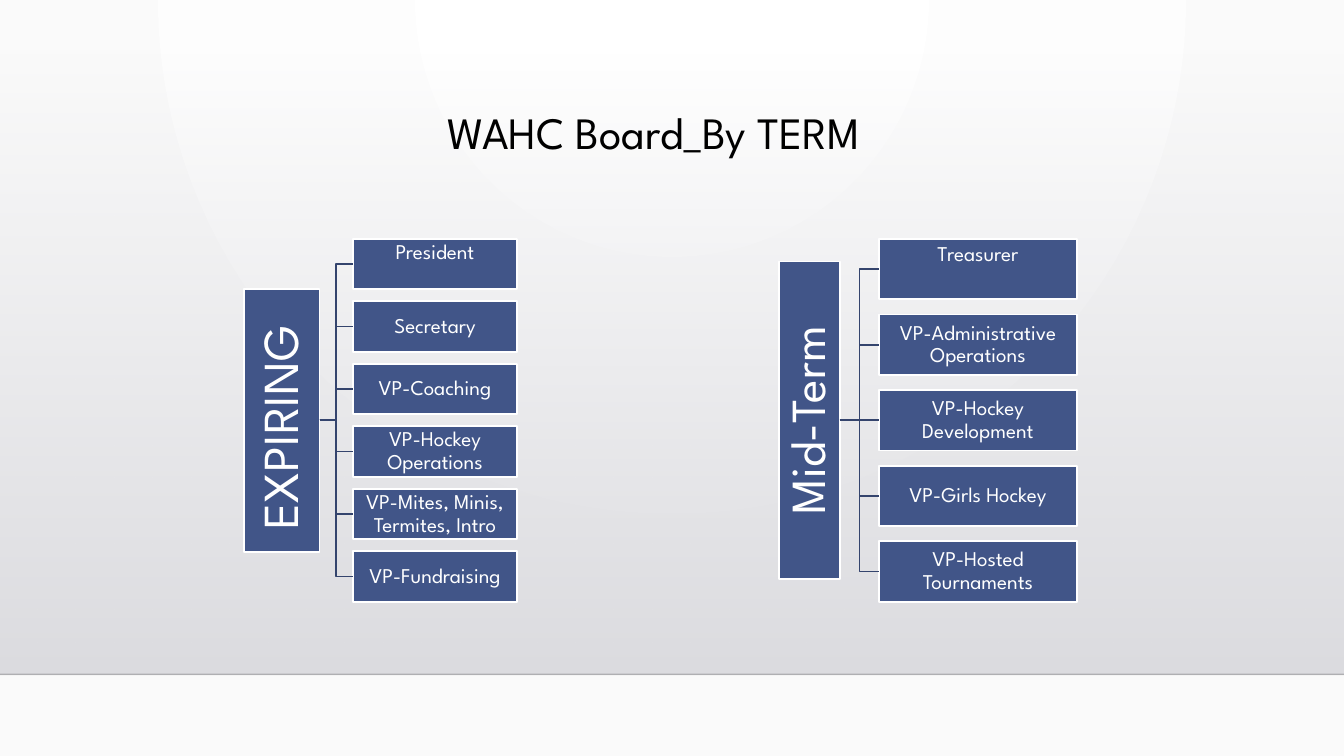
from lxml import etree
from pptx import Presentation
from pptx.dml.color import RGBColor
from pptx.enum.shapes import MSO_CONNECTOR, MSO_SHAPE
from pptx.enum.text import MSO_ANCHOR, PP_ALIGN
from pptx.oxml import parse_xml
from pptx.oxml.ns import nsdecls, qn
from pptx.util import Inches, Pt

RECTANGLE = MSO_SHAPE.RECTANGLE
STRAIGHT = MSO_CONNECTOR.STRAIGHT
CENTER = PP_ALIGN.CENTER
TOP, MIDDLE = MSO_ANCHOR.TOP, MSO_ANCHOR.MIDDLE
BLACK = RGBColor(0x00, 0x00, 0x00)
FLOOR_EDGE = RGBColor(0x00, 0x00, 0x01)
WHITE = RGBColor(0xFF, 0xFF, 0xFF)
CARD_BLUE = RGBColor(0x41, 0x55, 0x88)
BRANCH_BLUE = RGBColor(0x34, 0x44, 0x6D)
FONT = "League Spartan"
MID_Y = 4.17

TERMS = [
    {"label": "EXPIRING", "size": 36, "bar_left": 2.42, "bar_width": 0.75,
     "bar_length": 2.61, "bar_inset": 0.03, "bar_end_inset": 0.17,
     "card_left": 3.5, "card_width": 1.63, "card_height": 0.5, "pitch": 0.62,
     "first_inset": 0.02,
     "roles": ["President", "Secretary", "VP-Coaching", "VP-Hockey Operations",
               "VP-Mites, Minis, Termites, Intro", "VP-Fundraising"]},
    {"label": "Mid-Term", "size": 35, "bar_left": 7.73, "bar_width": 0.6,
     "bar_length": 3.15, "bar_inset": 0.02, "bar_end_inset": 0.02,
     "card_left": 8.72, "card_width": 1.96, "card_height": 0.6, "pitch": 0.75,
     "first_inset": 0.04,
     "roles": ["Treasurer", "VP-Administrative Operations", "VP-Hockey Development",
               "VP-Girls Hockey", "VP-Hosted Tournaments"]},
]


def set_gradient(element, stops, direction):
    solid = element.find(".//" + qn("a:solidFill"))
    stop_xml = "".join(
        f'<a:gs pos="{pos}"><a:srgbClr val="{color}"><a:alpha val="{alpha}"/></a:srgbClr></a:gs>'
        for pos, color, alpha in stops)
    solid.getparent().replace(solid, parse_xml(
        f'<a:gradFill {nsdecls("a")} rotWithShape="1"><a:gsLst>{stop_xml}</a:gsLst>'
        f'{direction}</a:gradFill>'))


def write(shape, text, size, color, anchor, inset):
    frame = shape.text_frame
    settings = {"word_wrap": True, "vertical_anchor": anchor, "margin_left": Inches(inset),
                "margin_right": Inches(inset), "margin_top": Inches(inset),
                "margin_bottom": Inches(inset)}
    for key, value in settings.items():
        setattr(frame, key, value)
    paragraph = frame.paragraphs[0]
    paragraph.text = text
    paragraph.alignment = CENTER
    paragraph.line_spacing = 0.9
    font = paragraph.runs[0].font
    font.name, font.size = FONT, Pt(size)
    font.color.rgb = color


prs = Presentation()
prs.slide_width, prs.slide_height = Inches(13.33), Inches(7.5)
slide = prs.slides.add_slide(prs.slide_layouts[6])
shapes = slide.shapes

slide.background.fill.solid()
slide.background.fill.fore_color.rgb = WHITE
set_gradient(slide.element, [(0, "FFFFFF", 100000), (100000, "FAFAFA", 100000)],
             '<a:path path="circle"><a:fillToRect l="43000" r="43000" b="100000"/></a:path>')

wall = shapes.add_shape(RECTANGLE, 0, Inches(0.51), Inches(13.33), Inches(6.18))
wall.shadow.inherit = False
wall.line.fill.background()
wall.fill.solid()
wall.fill.fore_color.rgb = WHITE
set_gradient(wall.element, [(0, "DCDCE0", 0), (100000, "DEDEE2", 100000)],
             '<a:lin ang="5400000" scaled="0"/>')

floor = shapes.add_connector(STRAIGHT, 0, Inches(6.69), Inches(13.33), Inches(6.69))
floor.line.color.rgb = FLOOR_EDGE
floor.line.width = Pt(1)
floor_color = floor.element.find(".//" + qn("a:srgbClr"))
etree.SubElement(floor_color, qn("a:alpha")).set("val", "20000")
etree.SubElement(floor.element.spPr, qn("a:effectLst"))

title = shapes.add_textbox(Inches(1.24), Inches(1.05), Inches(10.5), Inches(1.16))
write(title, "WAHC Board_By TERM", 32, BLACK, TOP, 0.05)

for term in TERMS:
    bar_right = term["bar_left"] + term["bar_width"]
    bar_middle = term["bar_left"] + term["bar_width"] / 2
    bar = shapes.add_shape(
        RECTANGLE, Inches(bar_middle - term["bar_length"] / 2),
        Inches(MID_Y - term["bar_width"] / 2),
        Inches(term["bar_length"]), Inches(term["bar_width"]))
    bar.rotation = 270
    write(bar, term["label"], term["size"], WHITE, MIDDLE, term["bar_inset"])
    bar.text_frame.margin_right = Inches(term["bar_end_inset"])
    boxes = [bar]

    trunk_x = (bar_right + term["card_left"]) / 2
    for i, role in enumerate(term["roles"]):
        offset = (i - (len(term["roles"]) - 1) / 2) * term["pitch"]
        card_y = MID_Y + offset
        card = shapes.add_shape(
            RECTANGLE, Inches(term["card_left"]), Inches(card_y - term["card_height"] / 2),
            Inches(term["card_width"]), Inches(term["card_height"]))
        write(card, role, 15, WHITE, TOP if i == 0 else MIDDLE, 0.01)
        if i == 0:
            card.text_frame.margin_top = Inches(term["first_inset"])
        boxes.append(card)

        if offset == 0:
            branch = shapes.add_connector(STRAIGHT, Inches(bar_right), Inches(MID_Y),
                                          Inches(term["card_left"]), Inches(MID_Y))
            branch.end_connect(card, 1)
            etree.SubElement(branch.element.spPr, qn("a:effectLst"))
        else:
            outline = shapes.build_freeform(Inches(bar_right), Inches(MID_Y))
            outline.add_line_segments(
                [(Inches(trunk_x), Inches(MID_Y)), (Inches(trunk_x), Inches(card_y)),
                 (Inches(term["card_left"]), Inches(card_y))], close=False)
            branch = outline.convert_to_shape()
            branch.fill.background()
            branch.shadow.inherit = False
        branch.line.color.rgb = BRANCH_BLUE
        branch.line.width = Pt(1.25)

    for box in boxes:
        box.shadow.inherit = False
        box.fill.solid()
        box.fill.fore_color.rgb = CARD_BLUE
        box.line.color.rgb = WHITE
        box.line.width = Pt(1.25)

prs.save("out.pptx")
